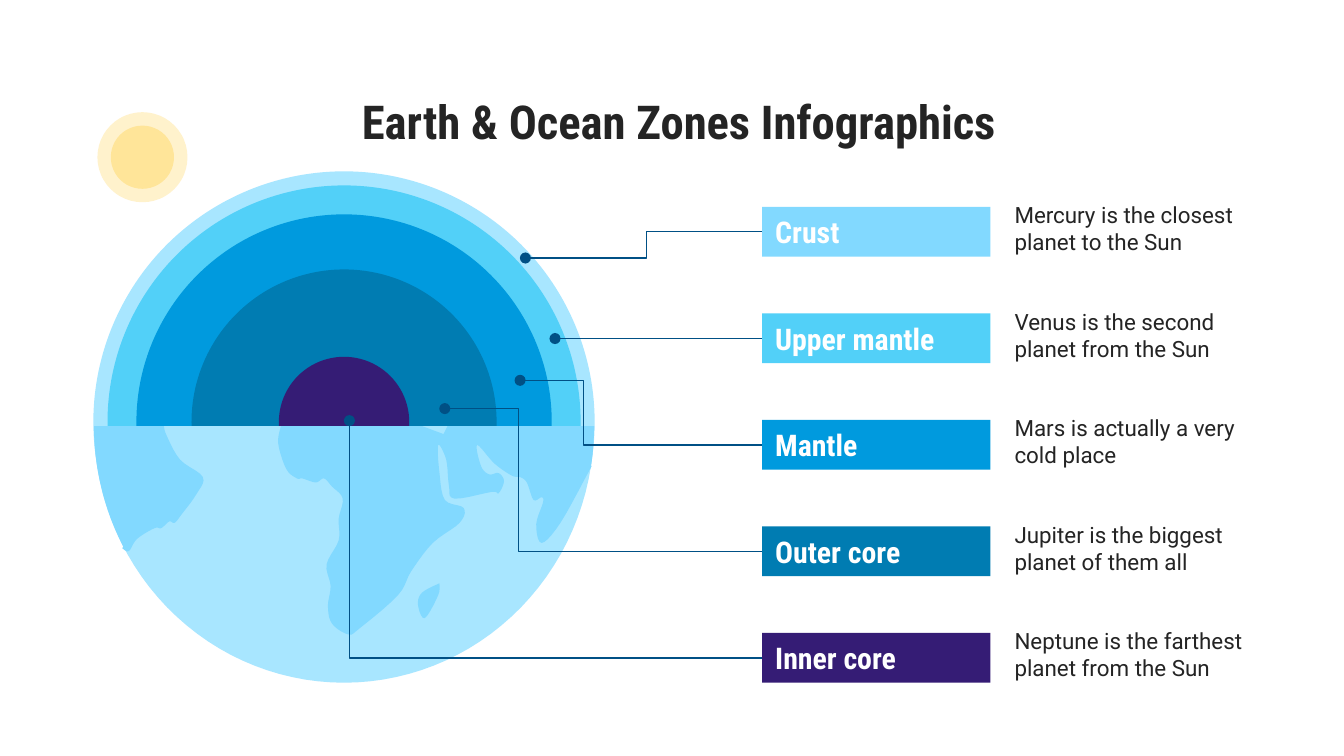
from math import cos, radians, sin

from lxml.etree import SubElement
from pptx import Presentation
from pptx.dml.color import RGBColor
from pptx.enum.shapes import MSO_CONNECTOR, MSO_SHAPE
from pptx.enum.text import MSO_ANCHOR, MSO_AUTO_SIZE, PP_ALIGN
from pptx.oxml.ns import qn
from pptx.util import Inches, Pt

COLORS = {
    "text": "242424", "white": "FFFFFF", "line": "005085",
    "halo": "FFF2CC", "sun": "FFE599", "ocean": "A8E6FF", "crust": "82D9FF",
    "upper mantle": "52D0F8", "mantle": "009ADE", "outer core": "007CB2",
    "inner core": "351C75",
}
HEADING_FONT, BODY_FONT = "Roboto Condensed", "Roboto"
GLOBE_X, GLOBE_Y, EQUATOR = 2.56, 3.14, 3.17
OCEAN_WIDTH, OCEAN_DEPTH = 1.86, 1.91
LABEL_LEFT, LABEL_TOP, LABEL_HEIGHT, LABEL_STEP = 5.67, 1.54, 0.37, 3.17 / 4

LAYERS = [
    ("ocean", 3.73), ("upper mantle", 3.52), ("mantle", 3.09),
    ("outer core", 2.27), ("inner core", 0.97),
]
ZONES = [
    ("Crust", "Mercury is the closest planet to the Sun", (3.91, 1.92), 4.81),
    ("Upper mantle", "Venus is the second planet from the Sun", (4.13, 2.52), 4.19),
    ("Mantle", "Mars is actually a very cold place", (3.87, 2.83), 4.34),
    ("Outer core", "Jupiter is the biggest planet of them all", (3.31, 3.04), 3.86),
    ("Inner core", "Neptune is the farthest planet from the Sun", (2.6, 3.13), 2.6),
]
AMERICA = [
    (0.91, 4.08), (0.96, 4.1), (1.02, 4.01), (1.15, 3.93), (1.2, 3.93),
    (1.26, 3.88), (1.3, 3.89), (1.35, 3.83), (1.46, 3.68), (1.51, 3.55),
    (1.34, 3.42), (1.24, 3.24), (1.22, 3.17),
]
AFRICA_AND_ASIA = [
    (2.09, 3.17), (2.07, 3.3), (2.13, 3.49), (2.21, 3.56), (2.25, 3.56),
    (2.35, 3.59), (2.41, 3.56), (2.47, 3.62), (2.55, 3.71), (2.52, 3.86),
    (2.52, 4.02), (2.43, 4.2), (2.46, 4.36), (2.44, 4.51), (2.47, 4.64),
    (2.59, 4.72), (2.67, 4.68), (2.96, 4.43), (3.06, 4.25), (3.22, 4.04),
    (3.42, 3.89), (3.45, 3.78), (3.31, 3.72), (3.27, 3.52), (3.26, 3.31),
    (3.32, 3.42), (3.34, 3.61), (3.38, 3.71), (3.66, 3.66), (3.71, 3.67),
    (3.75, 3.58), (3.71, 3.52), (3.64, 3.53), (3.58, 3.47), (3.55, 3.31),
    (3.68, 3.45), (3.81, 3.54), (3.87, 3.55), (3.92, 3.59), (3.97, 3.72),
    (4.03, 3.7), (4.04, 3.74), (3.99, 3.9), (4.03, 4.04), (4.17, 3.89),
    (4.38, 3.51), (4.4, 3.47),
]
RED_SEA_GAP = [(3.33, 3.17), (3.3, 3.23), (3.14, 3.17)]
MADAGASCAR = [
    (3.27, 4.34), (3.14, 4.41), (3.11, 4.5), (3.16, 4.6), (3.26, 4.43), (3.27, 4.34),
]


def color(name):
    """Return the named colour."""
    return RGBColor.from_string(COLORS[name])


def paint(shape, name):
    """Give a shape a plain fill without line or shadow."""
    shape.shadow.inherit = False
    shape.fill.solid()
    shape.fill.fore_color.rgb = color(name)
    shape.line.fill.background()


def write(shape, text, font, size, name, bold=False, anchor=MSO_ANCHOR.TOP,
          align=PP_ALIGN.LEFT):
    """Write one formatted run into a shape."""
    frame = shape.text_frame
    frame.word_wrap = True
    frame.auto_size = MSO_AUTO_SIZE.NONE
    frame.vertical_anchor = anchor
    frame.margin_left = frame.margin_right = Inches(0.1)
    frame.margin_top = frame.margin_bottom = Inches(0.1)
    para = frame.paragraphs[0]
    para.alignment = align
    span = para.add_run()
    span.text = text
    span.font.name, span.font.size, span.font.bold = font, Pt(size), bold
    span.font.color.rgb = color(name)


def add_title(page, text):
    """Place and fill the title placeholder."""
    title = page.shapes.title
    title.left, title.top = Inches(0.59), Inches(0.59)
    title.width, title.height = Inches(8.92), Inches(0.63)
    write(title, text, HEADING_FONT, 25, "text", True, align=PP_ALIGN.CENTER)


def add_circle(page, x, y, diameter, name):
    """Add a circle around a centre point."""
    circle = page.shapes.add_shape(
        MSO_SHAPE.OVAL, Inches(x - diameter / 2), Inches(y - diameter / 2),
        Inches(diameter), Inches(diameter))
    paint(circle, name)
    return circle


def ocean_arc(start, end, steps=60):
    """Return points on the ocean's rim between two angles in degrees."""
    angles = [radians(start + (end - start) * i / steps) for i in range(steps + 1)]
    return [(GLOBE_X + OCEAN_WIDTH * cos(a), EQUATOR + OCEAN_DEPTH * sin(a)) for a in angles]


def smooth(points, steps=5):
    """Return a Catmull-Rom curve through the points."""
    padded = [points[0], *points, points[-1]]
    curve = []
    for a, b, c, d in zip(padded, padded[1:], padded[2:], padded[3:]):
        for t in (i / steps for i in range(steps)):
            curve.append(tuple(
                q + t * (r - p) / 2 + t ** 2 * (2 * p - 5 * q + 4 * r - s) / 2
                + t ** 3 * (3 * q - p - 3 * r + s) / 2
                for p, q, r, s in zip(a, b, c, d)))
    return curve + [points[-1]]


def add_outline(page, points, name):
    """Add a closed filled outline."""
    start, *rest = [(Inches(x), Inches(y)) for x, y in points]
    builder = page.shapes.build_freeform(*start)
    builder.add_line_segments(rest, close=True)
    paint(builder.convert_to_shape(), name)


def add_leader(page, dot, turn, end):
    """Add an elbow line from a dot, turning at the given x."""
    leader = page.shapes.add_connector(
        MSO_CONNECTOR.ELBOW, *(Inches(value) for value in (*dot, *end)))
    leader.line.color.rgb = color("line")
    leader.line.width = Pt(0.75)
    properties = leader.element.spPr
    SubElement(properties.find(qn("a:ln")), qn("a:headEnd"), type="oval")
    SubElement(properties, qn("a:effectLst"))
    share = round((turn - dot[0]) / (end[0] - dot[0]) * 100000)
    guides = properties.find(qn("a:prstGeom")).get_or_add_avLst()
    SubElement(guides, qn("a:gd"), name="adj1", fmla=f"val {share}")


def add_zone(page, index, name, description, dot, turn):
    """Add a zone's leader, label and description."""
    top = LABEL_TOP + index * LABEL_STEP
    add_leader(page, dot, turn, (LABEL_LEFT, top + LABEL_HEIGHT / 2))
    label = page.shapes.add_shape(
        MSO_SHAPE.RECTANGLE, Inches(LABEL_LEFT), Inches(top), Inches(1.7), Inches(LABEL_HEIGHT))
    paint(label, name.lower())
    write(label, name, HEADING_FONT, 16, "white", True, MSO_ANCHOR.MIDDLE)
    box = page.shapes.add_textbox(Inches(7.45), Inches(top - 0.14), Inches(1.92), Inches(0.63))
    write(box, description, BODY_FONT, 12, "text")


def add_sun(page):
    """Add the sun with its halo."""
    add_circle(page, 1.06, 1.17, 0.67, "halo")
    sun = add_circle(page, 1.06, 1.17, 0.46, "sun")
    sun.line.color.rgb = color("sun")
    sun.line.width = Pt(0.75)


def add_globe(page):
    """Add the layered upper half and the mapped lower half."""
    for name, diameter in LAYERS:
        add_circle(page, GLOBE_X, GLOBE_Y, diameter, name)
    add_outline(page, ocean_arc(0, 180), "ocean")
    add_outline(page, ocean_arc(180, 152) + smooth(AMERICA), "crust")
    add_outline(page, smooth(AFRICA_AND_ASIA) + ocean_arc(9, 0) + RED_SEA_GAP, "crust")
    add_outline(page, smooth(MADAGASCAR), "crust")


def main():
    """Build and save the slide."""
    deck = Presentation()
    deck.slide_width = Inches(10)
    deck.slide_height = deck.slide_width * 9 // 16
    page = deck.slides.add_slide(deck.slide_layouts[5])
    add_title(page, "Earth & Ocean Zones Infographics")
    add_sun(page)
    add_globe(page)
    for index, zone in enumerate(ZONES):
        add_zone(page, index, *zone)
    deck.save("out.pptx")


if __name__ == "__main__":
    main()
